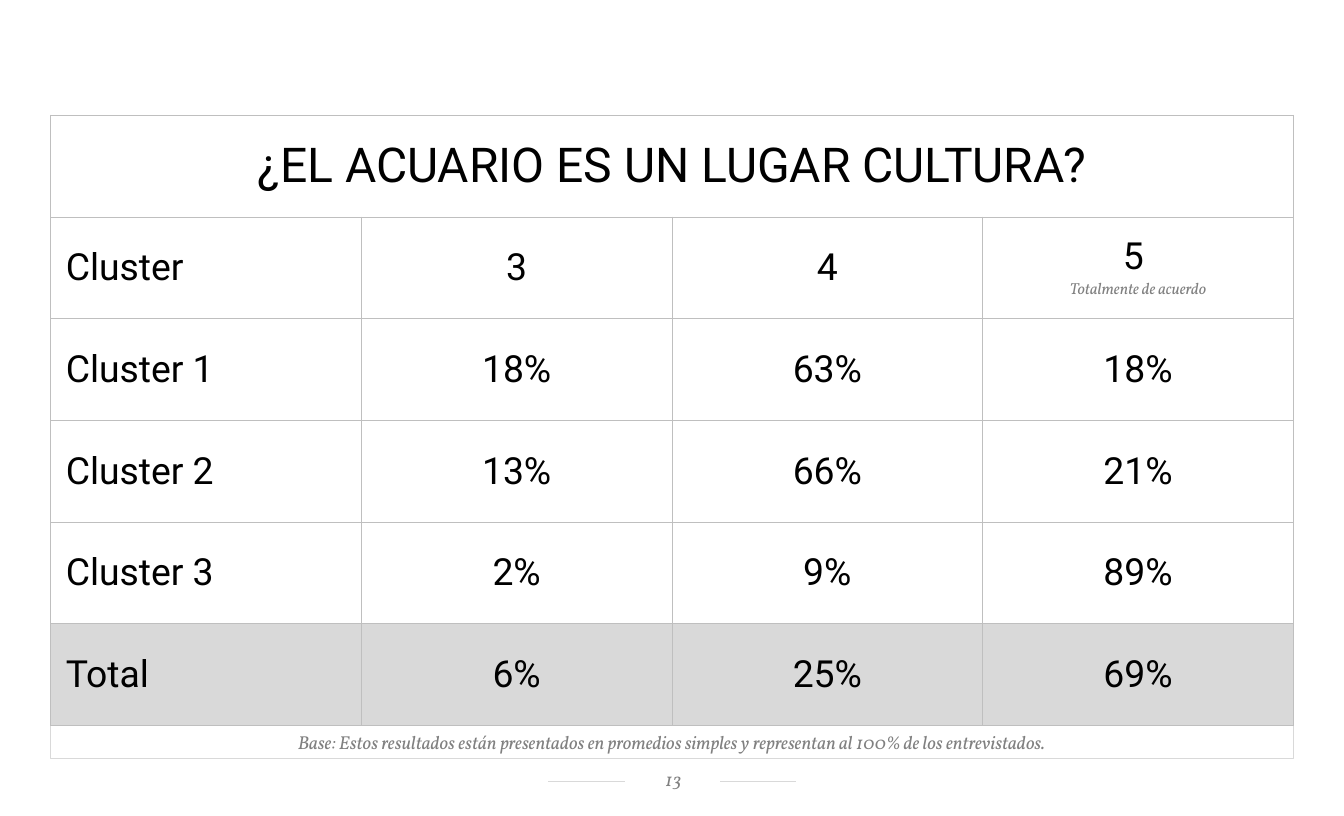
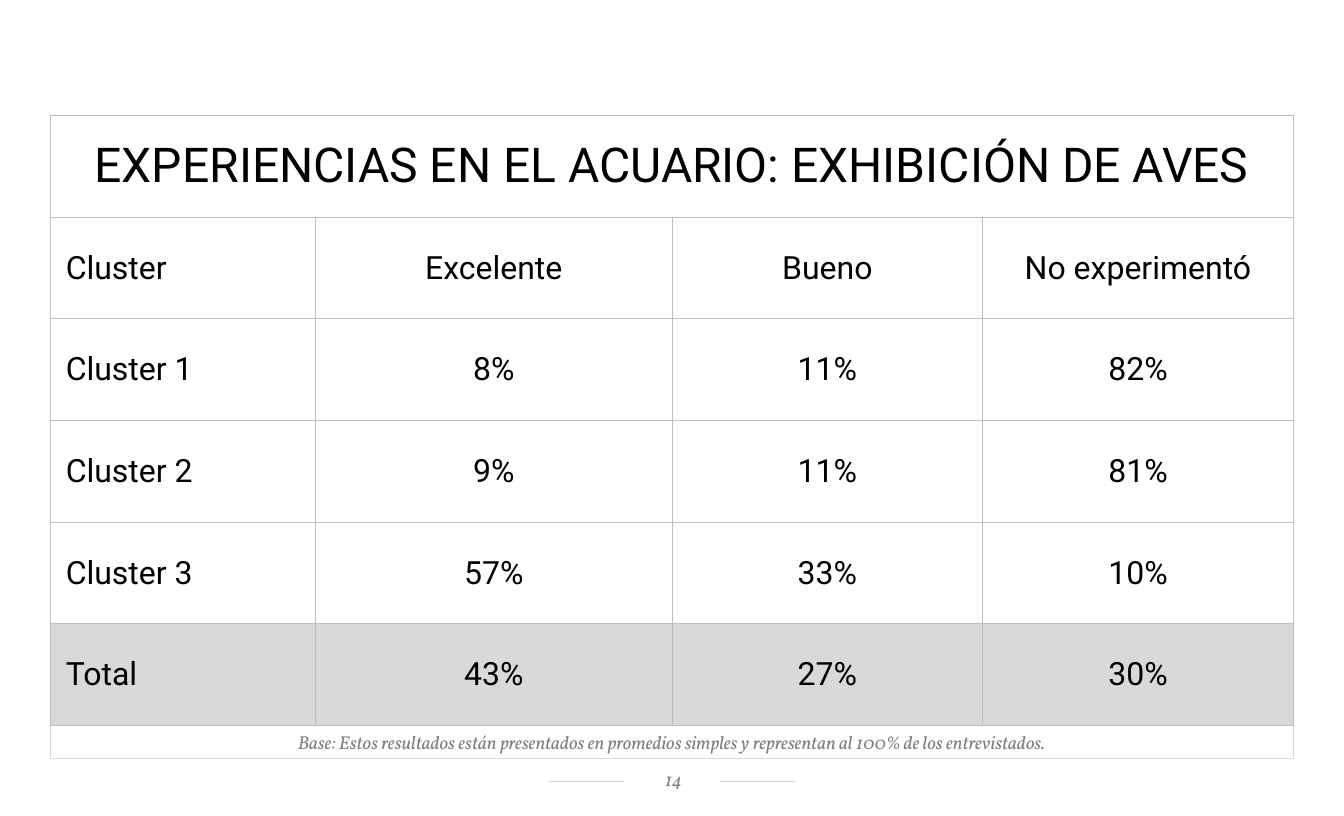
from dataclasses import dataclass

from lxml.etree import SubElement
from pptx import Presentation
from pptx.dml.color import RGBColor
from pptx.enum.shapes import MSO_CONNECTOR, MSO_SHAPE
from pptx.enum.text import MSO_ANCHOR, MSO_AUTO_SIZE, PP_ALIGN
from pptx.oxml.ns import qn
from pptx.util import Cm, Pt


@dataclass(frozen=True)
class Theme:
    ink: str = "000000"
    muted: str = "808080"
    pale: str = "D9D9D9"
    grid: str = "BFBFBF"
    paper: str = "FFFFFF"
    sans: str = "Roboto"
    serif: str = "Vollkorn"
    title_size: int = 36
    note_size: int = 14
    hint_size: int = 12
    thin: float = 0.5
    frame: float = 0.75


# Shared layout, in centimetres
LEFT, TOP, WIDTH, ROW_HEIGHT = 1.34, 3.05, 32.88, 2.69
NOTE_TOP, NOTE_HEIGHT = 19.2, 0.86
RULE_LEFT, RULE_RIGHT, RULE_Y = 14.5, 21.06, 20.68
BASE_NOTE = ("Base: Estos resultados están presentados en promedios simples "
             "y representan al 100% de los entrevistados.")


class PageBuilder:
    def __init__(self, deck, theme):
        self.deck = deck
        self.theme = theme
        self.page = None

    def new_page(self):
        self.page = self.deck.slides.add_slide(self.deck.slide_layouts[6])

    def set_text(self, para, text, size, align=PP_ALIGN.CENTER, note=False):
        """Fill a paragraph in the note style or the plain table style."""
        theme = self.theme
        para.text = text
        para.alignment = align
        font = para.font
        font.name = theme.serif if note else theme.sans
        font.size = Pt(size)
        font.italic = note
        font.bold = False
        font.color.rgb = RGBColor.from_string(theme.muted if note else theme.ink)

    def set_margins(self, target, left, top, right, bottom):
        target.margin_left, target.margin_top = Cm(left), Cm(top)
        target.margin_right, target.margin_bottom = Cm(right), Cm(bottom)

    def rule(self, x1, x2, y):
        line = self.page.shapes.add_connector(
            MSO_CONNECTOR.STRAIGHT, Cm(x1), Cm(y), Cm(x2), Cm(y))
        line.line.color.rgb = RGBColor.from_string(self.theme.pale)
        line.line.width = Pt(self.theme.thin)
        SubElement(line._element.spPr, qn("a:effectLst"))

    def note_box(self, text, left, top, width, height, framed=False):
        box = self.page.shapes.add_shape(
            MSO_SHAPE.RECTANGLE, Cm(left), Cm(top), Cm(width), Cm(height))
        box.shadow.inherit = False
        box.fill.solid()
        box.fill.fore_color.rgb = RGBColor.from_string(self.theme.paper)
        if framed:
            box.line.color.rgb = RGBColor.from_string(self.theme.pale)
            box.line.width = Pt(self.theme.frame)
        else:
            box.line.fill.background()
        frame = box.text_frame
        frame.word_wrap = True
        self.set_text(frame.paragraphs[0], text, self.theme.note_size, note=True)
        return frame

    def footer(self, number):
        self.rule(RULE_LEFT, RULE_RIGHT, RULE_Y)
        frame = self.note_box(str(number), 16.54, 20.27, 2.51, 0.74)
        frame.vertical_anchor = MSO_ANCHOR.MIDDLE
        self.set_margins(frame, 0.3, 0.05, 0.25, 0.13)

    def base_note(self):
        frame = self.note_box(BASE_NOTE, LEFT, NOTE_TOP, WIDTH, NOTE_HEIGHT, framed=True)
        frame.vertical_anchor = MSO_ANCHOR.BOTTOM
        frame.auto_size = MSO_AUTO_SIZE.SHAPE_TO_FIT_TEXT

    def style_cell(self, cell, shaded, indented):
        properties = cell._tc.get_or_add_tcPr()
        for side in ("a:lnL", "a:lnR", "a:lnT", "a:lnB"):
            border = SubElement(properties, qn(side), w=str(Pt(self.theme.thin)))
            fill = SubElement(border, qn("a:solidFill"))
            SubElement(fill, qn("a:srgbClr"), val=self.theme.grid)
        if shaded:
            cell.fill.solid()
            cell.fill.fore_color.rgb = RGBColor.from_string(self.theme.pale)
        else:
            cell.fill.background()
        cell.vertical_anchor = MSO_ANCHOR.MIDDLE
        self.set_margins(cell, 0.2 if indented else 0.02, 0.02, 0.02, 0)

    def table(self, title, rows, widths, size):
        """Title row over all columns, then the rows; the last one is shaded."""
        count = len(rows) + 1
        table = self.page.shapes.add_table(
            count, len(widths), Cm(LEFT), Cm(TOP), Cm(WIDTH), Cm(ROW_HEIGHT * count)).table
        table.first_row = table.horz_banding = False
        for column, width in zip(table.columns, widths):
            column.width = Cm(width)
        for row in table.rows:
            row.height = Cm(ROW_HEIGHT)

        # Title
        for cell in table.rows[0].cells:
            self.style_cell(cell, shaded=False, indented=False)
        table.cell(0, 0).merge(table.cell(0, len(widths) - 1))
        self.set_text(table.cell(0, 0).text_frame.paragraphs[0], title, self.theme.title_size)

        # Header, clusters and total
        for r, values in enumerate(rows, start=1):
            for c, value in enumerate(values):
                cell = table.cell(r, c)
                self.style_cell(cell, shaded=r == len(rows), indented=c == 0)
                text, *hints = value.split("\n")
                para = cell.text_frame.paragraphs[0]
                self.set_text(para, text, size, PP_ALIGN.CENTER if c else PP_ALIGN.LEFT)
                if c == 0:
                    para._p.get_or_add_pPr().set("marL", str(Cm(0.2)))
                for hint in hints:
                    self.set_text(cell.text_frame.add_paragraph(), hint,
                                  self.theme.hint_size, note=True)


# Page number, title, column widths, text size, rows
PAGES = [
    (13, "¿EL ACUARIO ES UN LUGAR CULTURA?", [8.22] * 4, 28, [
        ("Cluster", "3", "4", "5 \nTotalmente de acuerdo"),
        ("Cluster 1", "18%", "63%", "18%"),
        ("Cluster 2", "13%", "66%", "21%"),
        ("Cluster 3", "2%", "9%", "89%"),
        ("Total", "6%", "25%", "69%"),
    ]),
    (14, "EXPERIENCIAS EN EL ACUARIO: EXHIBICIÓN DE AVES", [7.01, 9.43, 8.22, 8.22], 24, [
        ("Cluster", "Excelente", "Bueno", "No experimentó"),
        ("Cluster 1", "8%", "11%", "82%"),
        ("Cluster 2", "9%", "11%", "81%"),
        ("Cluster 3", "57%", "33%", "10%"),
        ("Total", "43%", "27%", "30%"),
    ]),
]


def main():
    deck = Presentation()
    deck.slide_width, deck.slide_height = Cm(35.56), Cm(21.59)
    builder = PageBuilder(deck, Theme())
    for number, title, widths, size, rows in PAGES:
        builder.new_page()
        builder.footer(number)
        builder.base_note()
        builder.table(title, rows, widths, size)
    deck.save("out.pptx")


if __name__ == "__main__":
    main()
